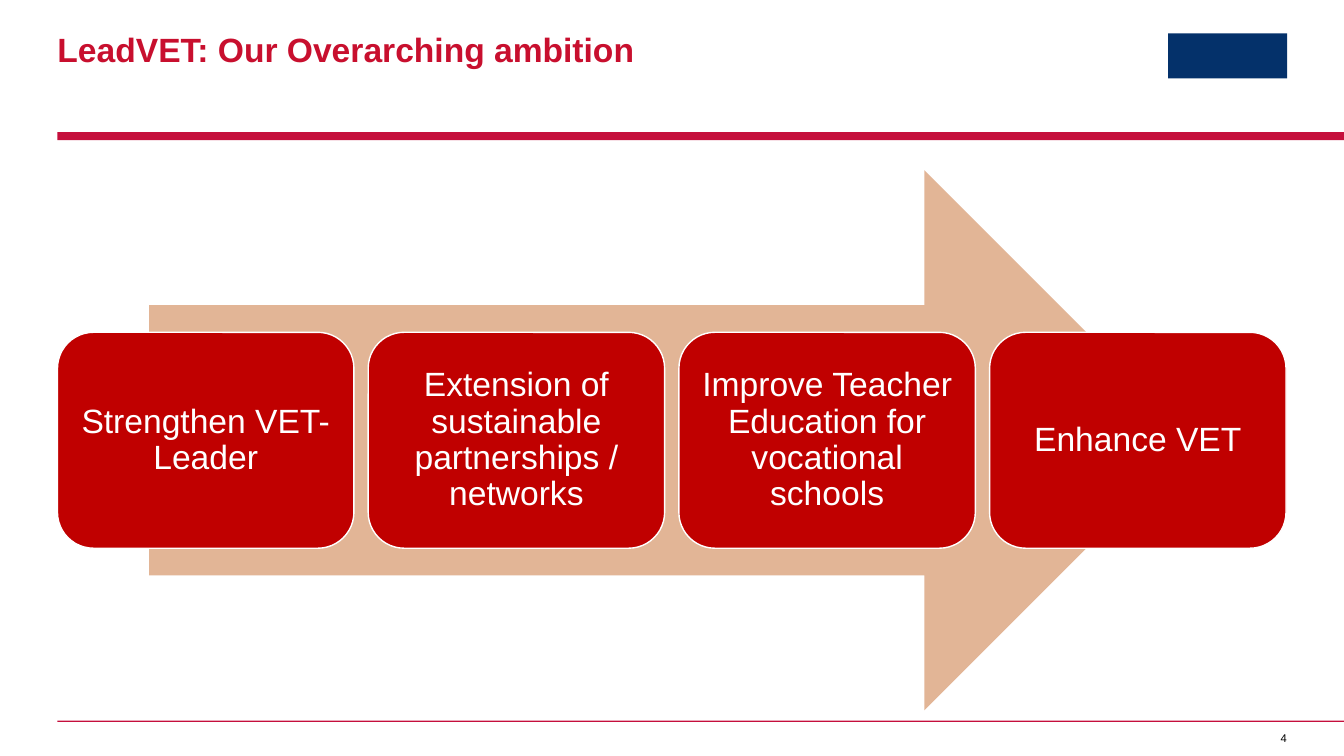
from pptx import Presentation
from pptx.dml.color import RGBColor
from pptx.enum.shapes import MSO_SHAPE
from pptx.enum.text import MSO_ANCHOR, PP_ALIGN
from pptx.util import Cm, Pt

TITLE = "LeadVET: Our Overarching ambition"
PAGE_NUMBER = "4"
STEPS = [
    "Strengthen VET-Leader",
    "Extension of sustainable partnerships / networks",
    "Improve Teacher Education for vocational schools",
    "Enhance VET",
]

THEME = {
    "font": "Arial",
    "rule": "C50F3C",
    "title": "C80F2E",
    "navy": "04316A",
    "arrow": "E2B596",
    "card": "C00000",
    "white": "FFFFFF",
    "black": "000000",
    "large": 24,
    "small": 8,
}

# All lengths in centimetres
SLIDE_W, SLIDE_H = 33.87, 19.05
MARGIN = 1.45
RULES = [(3.33, 0.2), (18.16, 0.03)]  # top, height
EMBLEM = (29.44, 0.84, 3.0, 1.14)
ARROW = (3.76, 4.29, 26.34, 13.61)
CARD_W, CARD_H, CARD_GAP = 7.47, 5.44, 0.36
CARD_TOP = ARROW[1] + (ARROW[3] - CARD_H) / 2
CARD_INSET = 0.26


def color(name):
    return RGBColor.from_string(THEME[name])


def add_block(slide, preset, box, fill):
    block = slide.shapes.add_shape(preset, *map(Cm, box))
    block.shadow.inherit = False
    block.fill.solid()
    block.fill.fore_color.rgb = color(fill)
    block.line.fill.background()
    return block


def write(holder, text, ink, size="large", bold=False, align=PP_ALIGN.LEFT,
          anchor=MSO_ANCHOR.TOP, inset=0, wrap=True, spacing=0.9):
    frame = holder.text_frame
    frame_format = {"word_wrap": wrap, "vertical_anchor": anchor}
    for side in ("left", "top", "right", "bottom"):
        frame_format[f"margin_{side}"] = Cm(inset)
    for name, value in frame_format.items():
        setattr(frame, name, value)

    paragraph = frame.paragraphs[0]
    paragraph.alignment = align
    paragraph.line_spacing = spacing
    run = paragraph.add_run()
    run.text = text
    font_format = {"name": THEME["font"], "size": Pt(THEME[size]), "bold": bold}
    for name, value in font_format.items():
        setattr(run.font, name, value)
    run.font.color.rgb = color(ink)


def add_frame(slide):
    """Add the rules, emblem, title and page number around the content."""
    for top, height in RULES:
        add_block(slide, MSO_SHAPE.RECTANGLE,
                  (MARGIN, top, SLIDE_W - MARGIN, height), "rule")
    add_block(slide, MSO_SHAPE.RECTANGLE, EMBLEM, "navy")
    title = slide.shapes.add_textbox(Cm(MARGIN), Cm(0.84), Cm(19.02), Cm(0.91))
    write(title, TITLE, "title", bold=True)
    page = slide.shapes.add_textbox(Cm(31.9), Cm(18.44), Cm(0.53), Cm(0.33))
    write(page, PAGE_NUMBER, "black", size="small", align=PP_ALIGN.RIGHT,
          wrap=False, spacing=1.0)


def add_process(slide):
    add_block(slide, MSO_SHAPE.RIGHT_ARROW, ARROW, "arrow")
    for index, step in enumerate(STEPS):
        left = MARGIN + index * (CARD_W + CARD_GAP)
        card = add_block(slide, MSO_SHAPE.ROUNDED_RECTANGLE,
                         (left, CARD_TOP, CARD_W, CARD_H), "card")
        card.line.color.rgb = color("white")
        card.line.width = Pt(1)
        write(card, step, "white", align=PP_ALIGN.CENTER,
              anchor=MSO_ANCHOR.MIDDLE, inset=CARD_INSET)


def main():
    deck = Presentation()
    deck.slide_width, deck.slide_height = Cm(SLIDE_W), Cm(SLIDE_H)
    slide = deck.slides.add_slide(deck.slide_layouts[6])
    add_frame(slide)
    add_process(slide)
    deck.save("out.pptx")


if __name__ == "__main__":
    main()
